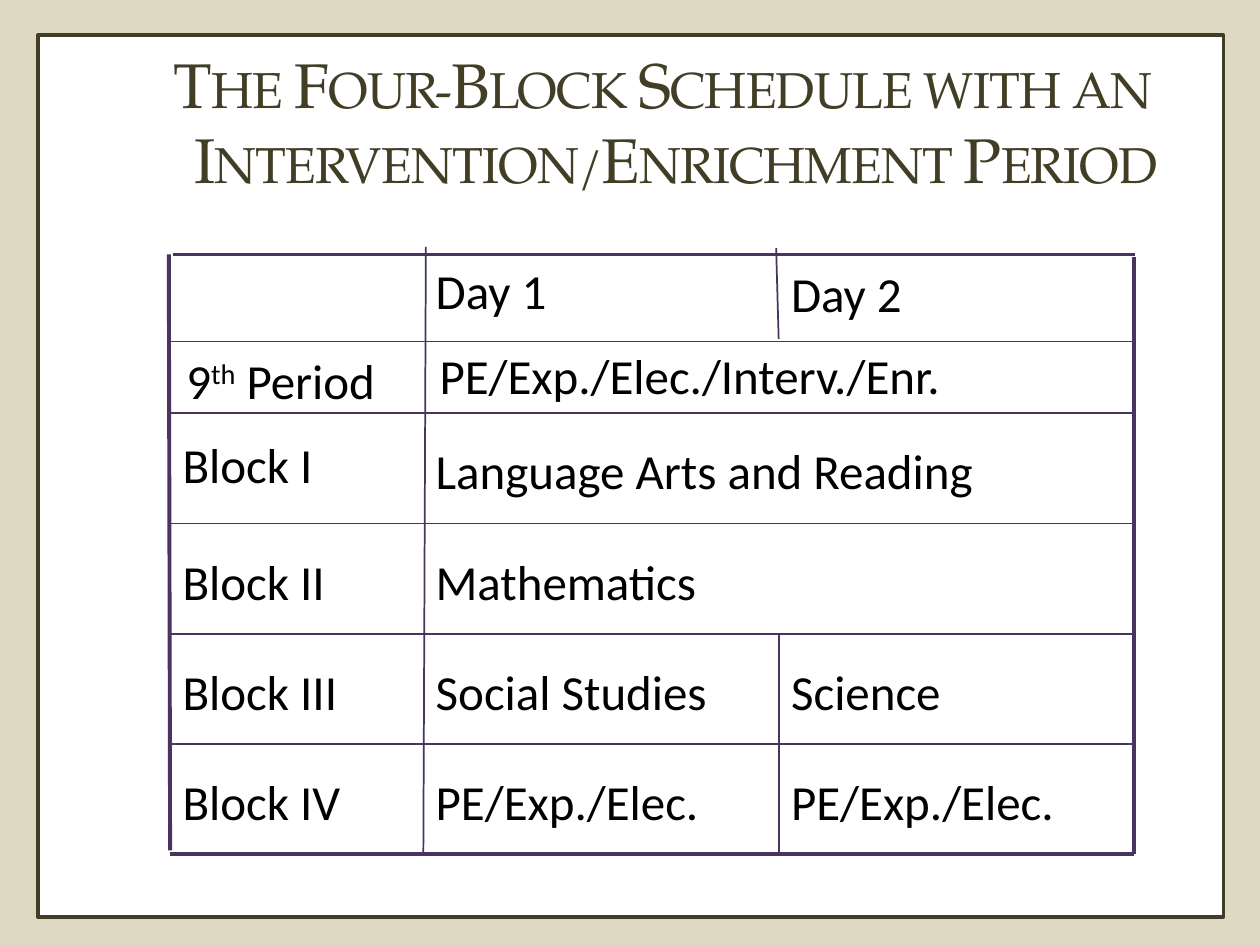
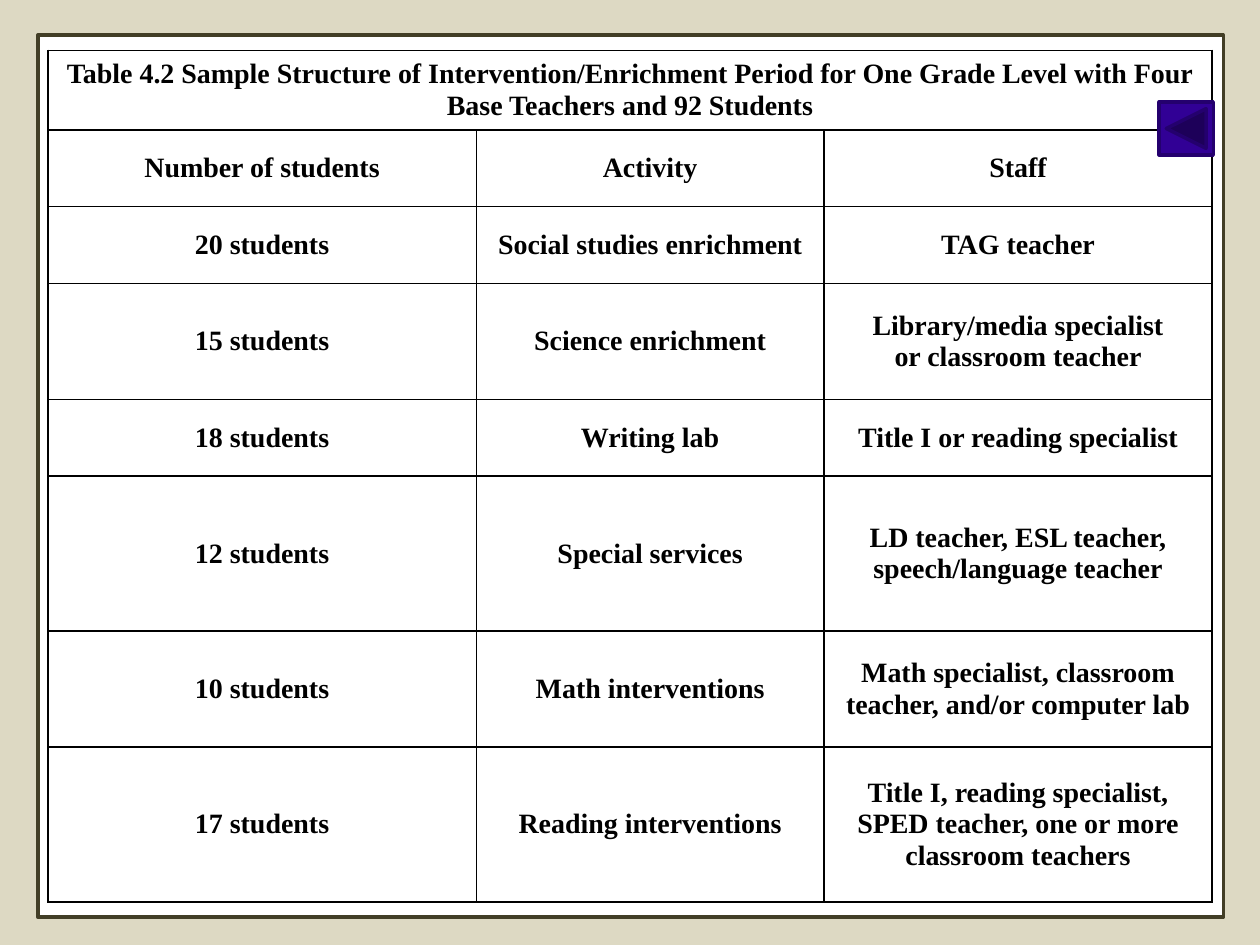
from lxml import etree
from pptx import Presentation
from pptx.dml.color import RGBColor
from pptx.enum import shapes, text
from pptx.oxml import parse_xml
from pptx.oxml.ns import nsdecls, qn
from pptx.util import Inches, Pt

SAND, OLIVE, WHITE, BLACK = "DDD9C3", "423E26", "FFFFFF", "000000"
PURPLE, BUTTON, BUTTON_EDGE = "49345F", "310095", "24006E"
TITLE_FONT, BODY_FONT, TABLE_FONT = "TeX Gyre Pagella", "Calibri", "Times New Roman"


def rgb(color):
    return RGBColor.from_string(color)


def inches(*lengths):
    return [Inches(length) for length in lengths]


def style(font, name, size, color, bold=False):
    font.name, font.size, font.bold = name, Pt(size), bold
    font.color.rgb = rgb(color)


def add_box(s, kind, box, fill, line):
    sp = s.shapes.add_shape(kind, *inches(*box))
    sp.shadow.inherit = False
    sp.fill.solid()
    sp.fill.fore_color.rgb = rgb(fill)
    sp.line.color.rgb = rgb(line)
    sp.line.width = Pt(2)
    return sp


def add_slide(prs, layout):
    s = prs.slides.add_slide(prs.slide_layouts[layout])
    frame = add_box(s, shapes.MSO_SHAPE.RECTANGLE, (0.3, 0.28, 9.41, 7), WHITE, OLIVE)
    frame.element.getparent().insert(2, frame.element)
    return s


def set_title(s, title, box):
    sp = s.shapes.title
    sp.left, sp.top, sp.width, sp.height = inches(*box)
    tf = sp.text_frame
    tf.word_wrap = True
    tf.auto_size = text.MSO_AUTO_SIZE.NONE
    tf.vertical_anchor = text.MSO_ANCHOR.MIDDLE
    tf.margin_left, tf.margin_right = inches(0, 0.64)
    p = tf.paragraphs[0]
    p.alignment = text.PP_ALIGN.CENTER
    r = p.add_run()
    r.text = title
    style(p.font, TITLE_FONT, 36, OLIVE)
    rPr = r.font._element
    rPr.set("cap", "small")
    rPr.set("spc", "-50")


def add_label(s, runs, box):
    sp = s.shapes.add_textbox(*inches(*box))
    tf = sp.text_frame
    tf.word_wrap = True
    p = tf.paragraphs[0]
    for content, baseline in runs:
        r = p.add_run()
        r.text = content
        if baseline:
            r.font._element.set("baseline", str(baseline))
    style(p.font, BODY_FONT, 28, BLACK)


def add_rule(s, start, end, width=1):
    line = s.shapes.add_connector(shapes.MSO_CONNECTOR.STRAIGHT, *inches(*start, *end))
    line.line.color.rgb = rgb(PURPLE)
    line.line.width = Pt(width)
    etree.SubElement(line.element.spPr, qn("a:effectLst"))


def add_schedule(s, left, top, width, height):
    day1, day2, right, bottom = left + 2.01, left + 4.83, left + width, top + height
    block_height, blocks_top = 0.875, top + 1.26
    period, day, both = day1 - left, day2 - day1, right - day1

    labels = [
        ("Day 1", day1, top, day),
        ("Day 2", day2, top + 0.02, day),
        ("PE/Exp./Elec./Interv./Enr.", day1 + 0.03, top + 0.67, both),
        ("Block I", left, blocks_top + 0.12, period),
        ("Language Arts and Reading", day1, blocks_top + 0.17, both),
    ]
    blocks = [
        ("Block II", "Mathematics"),
        ("Block III", "Social Studies", "Science"),
        ("Block IV", "PE/Exp./Elec.", "PE/Exp./Elec."),
    ]
    for i, (name, *subjects) in enumerate(blocks, 1):
        y = blocks_top + 0.17 + i * block_height
        labels.append((name, left, y, period))
        widths = [both] if len(subjects) == 1 else [day, day]
        labels += zip(subjects, (day1, day2), (y, y), widths)
    for content, x, y, w in labels:
        add_label(s, [(content, 0)], (x, y, w, 0.88))
    add_label(s, [("9", 0), ("th", 30000), (" Period", 0)],
              (left + 0.03, top + 0.71, period, 0.88))

    add_rule(s, (left + 0.02, top), (right + 0.01, top), 2.25)
    add_rule(s, (left, bottom), (right, bottom), 2.25)
    add_rule(s, (left - 0.01, top), (left, bottom - 0.03), 2.25)
    add_rule(s, (right, top + 0.02), (right, bottom), 2.25)
    for y in [top + 0.69] + [blocks_top + i * block_height for i in range(4)]:
        add_rule(s, (left, y), (right, y))
    add_rule(s, (day1 + 0.02, top - 0.06), (day1, bottom))
    add_rule(s, (day2 - 0.02, top - 0.05), (day2, top + 0.67))
    add_rule(s, (day2, bottom - 2 * block_height), (day2, bottom))


def format_cell(cell):
    tcPr = cell._tc.get_or_add_tcPr()
    for side in "LRTB":
        tcPr.append(parse_xml(
            f'<a:ln{side} {nsdecls("a")} w="12700"><a:solidFill>'
            f'<a:srgbClr val="{BLACK}"/></a:solidFill></a:ln{side}>'))
    cell.fill.background()
    cell.vertical_anchor = text.MSO_ANCHOR.MIDDLE
    cell.margin_left = cell.margin_right = Inches(0.07)
    cell.margin_top = cell.margin_bottom = 0
    for p in cell.text_frame.paragraphs:
        p.alignment = text.PP_ALIGN.CENTER
        style(p.font, TABLE_FONT, 16, BLACK, bold=True)


def add_staffing_table(s, box, caption, rows, col_widths, row_heights):
    table = s.shapes.add_table(len(row_heights), len(col_widths), *inches(*box)).table
    table.first_row = table.horz_banding = False
    for col, w in zip(table.columns, col_widths):
        col.width = Inches(w)
    for row, h in zip(table.rows, row_heights):
        row.height = Inches(h)
    table.cell(0, 0).merge(table.cell(0, len(col_widths) - 1))
    table.cell(0, 0).text = caption
    for i, row in enumerate(rows, 1):
        for j, content in enumerate(row):
            table.cell(i, j).text = content
    for cell in table.iter_cells():
        format_cell(cell)


def schedule_slide(prs):
    s = add_slide(prs, 5)
    set_title(s, "The Four-Block Schedule with an Intervention/Enrichment Period",
              (1.16, 0.51, 8.84, 0.9))
    add_schedule(s, 1.35, 2.02, 7.65, 4.76)


def staffing_slide(prs):
    s = add_slide(prs, 6)
    rows = [
        ("Number of students", "Activity", "Staff"),
        ("20 students", "Social studies enrichment", "TAG teacher"),
        ("15 students", "Science enrichment",
         "Library/media specialist\nor classroom teacher"),
        ("18 students", "Writing lab", "Title I or reading specialist"),
        ("12 students", "Special services",
         "LD teacher, ESL teacher, speech/language teacher"),
        ("10 students", "Math interventions",
         "Math specialist, classroom teacher, and/or computer lab"),
        ("17 students", "Reading interventions",
         "Title I, reading specialist, SPED teacher, one or more classroom teachers"),
    ]
    add_staffing_table(
        s, (0.38, 0.4, 9.24, 6.78),
        "Table 4.2 Sample Structure of Intervention/Enrichment Period "
        "for One Grade Level with Four Base Teachers and 92 Students",
        rows, (3.4, 2.76, 3.08), (0.63, 0.61, 0.61, 0.92, 0.61, 1.23, 0.92, 1.23))
    add_box(s, shapes.MSO_SHAPE.ACTION_BUTTON_BACK_OR_PREVIOUS,
            (9.2, 0.81, 0.43, 0.42), BUTTON, BUTTON_EDGE)


def main():
    prs = Presentation()
    prs.slide_width, prs.slide_height = inches(10, 7.5)
    fill = prs.slide_master.background.fill
    fill.solid()
    fill.fore_color.rgb = rgb(SAND)
    schedule_slide(prs)
    staffing_slide(prs)
    prs.save("out.pptx")


if __name__ == "__main__":
    main()
